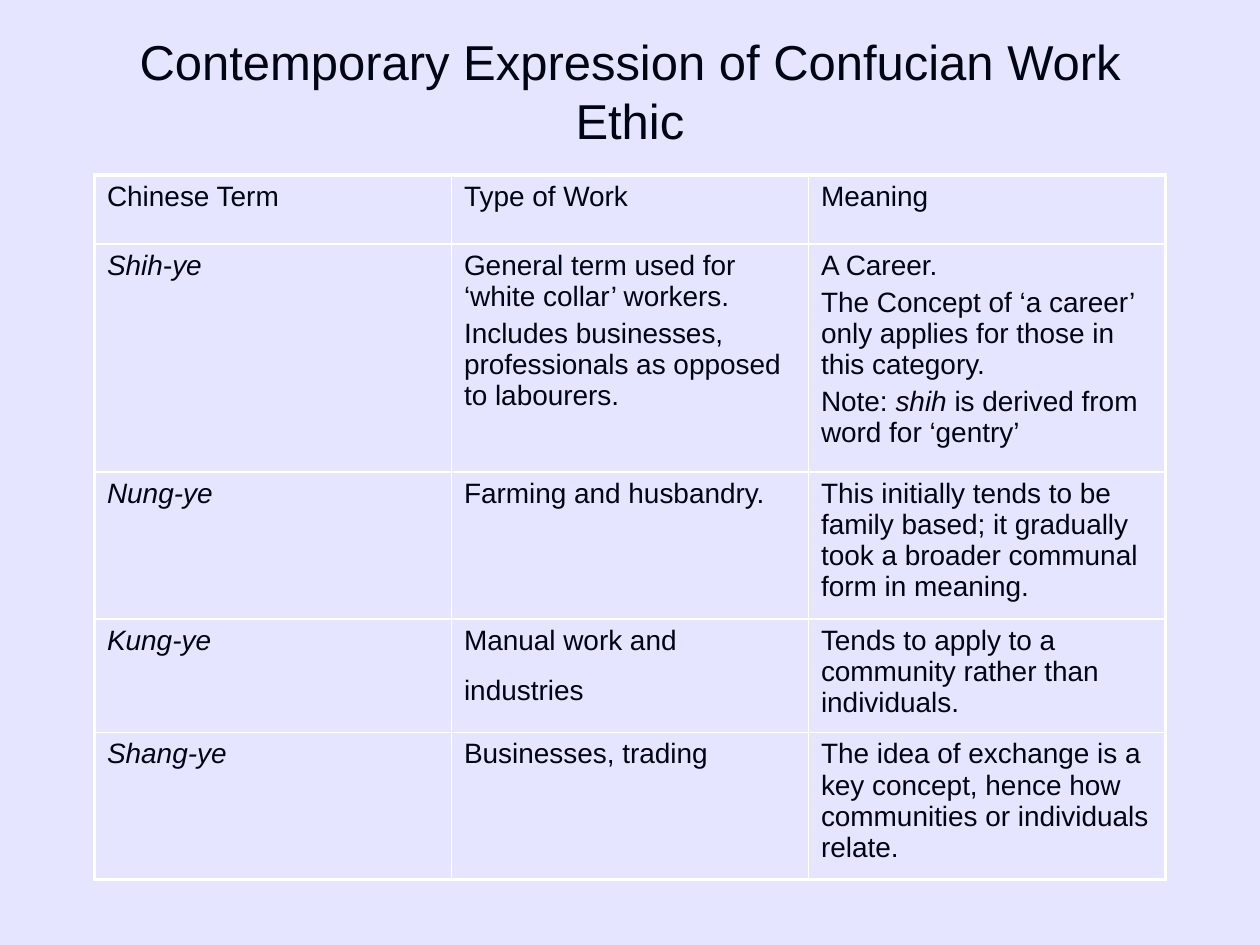
"""Build a slide tabulating Chinese terms of the Confucian work ethic."""
from dataclasses import dataclass

import pptx
import pptx.dml.color
import pptx.enum.text
import pptx.oxml.ns
import pptx.util
from lxml import etree

Pt = pptx.util.Pt


@dataclass(frozen=True)
class Theme:
    background: str = "E5E5FF"
    ink: str = "000514"
    border: str = "FFFFFF"
    font: str = "Arial"
    title_size: float = 28
    body_size: float = 16
    paragraph_gap: float = 3.2
    inner_border: float = 1
    outer_border: float = 2.25


@dataclass(frozen=True)
class WorkRow:
    height: float
    term: str
    work: tuple[str, ...]
    meaning: tuple[str, ...]


THEME = Theme()
LEFT, WIDTH = 54, 612
TABLE_TOP = 100
ROWS = (
    WorkRow(39.5, "Chinese Term", ("Type of Work",), ("Meaning",)),
    WorkRow(
        130.3,
        "*Shih*-*ye*",
        (
            "General term used for ‘white collar’ workers.",
            "Includes businesses, professionals as opposed to labourers.",
        ),
        (
            "A Career.",
            "The Concept of ‘a career’ only applies for those in this category.",
            "Note: *shih* is derived from word for ‘gentry’",
        ),
    ),
    WorkRow(
        84,
        "*Nung-ye*",
        ("Farming and husbandry.",),
        ("This initially tends to be family based; it gradually took a broader communal form in meaning.",),
    ),
    WorkRow(
        64.6,
        "*Kung-ye*",
        ("Manual work and industries",),
        ("Tends to apply to a community rather than individuals.",),
    ),
    WorkRow(
        84,
        "*Shang-ye*",
        ("Businesses, trading",),
        ("The idea of exchange is a key concept, hence how communities or individuals relate.",),
    ),
)


def add_span(para, text: str, size: float, italic: bool = False) -> None:
    """Add one styled run to a paragraph."""
    span = para.add_run()
    span.text = text
    span.font.name = THEME.font
    span.font.size = Pt(size)
    span.font.italic = italic
    span.font.bold = False
    span.font.color.rgb = pptx.dml.color.RGBColor.from_string(THEME.ink)


def write_paragraphs(frame, texts: tuple[str, ...]) -> None:
    """Write paragraphs in which asterisks enclose italic words."""
    for index, text in enumerate(texts):
        para = frame.add_paragraph() if index else frame.paragraphs[0]
        para.space_before = Pt(THEME.paragraph_gap if index else 0)
        for part, words in enumerate(text.split("*")):
            if words:
                add_span(para, words, THEME.body_size, italic=part % 2 == 1)


def draw_borders(cell, outer_sides: dict[str, bool]) -> None:
    """Give each side of a cell its inner or outer line width."""
    qn = pptx.oxml.ns.qn
    properties = cell._tc.get_or_add_tcPr()
    for side, outer in outer_sides.items():
        width = THEME.outer_border if outer else THEME.inner_border
        line = etree.SubElement(properties, qn(f"a:ln{side}"), w=str(int(Pt(width))))
        fill = etree.SubElement(line, qn("a:solidFill"))
        etree.SubElement(fill, qn("a:srgbClr"), val=THEME.border)


def add_title(page, text: str) -> None:
    """Add the centred slide title."""
    box = page.shapes.add_textbox(Pt(LEFT), Pt(15), Pt(WIDTH), Pt(73.5))
    box.text_frame.word_wrap = True
    box.text_frame.vertical_anchor = pptx.enum.text.MSO_ANCHOR.MIDDLE
    para = box.text_frame.paragraphs[0]
    para.alignment = pptx.enum.text.PP_ALIGN.CENTER
    add_span(para, text, THEME.title_size)


def add_work_table(page, rows: tuple[WorkRow, ...]) -> None:
    """Add the table of terms, kinds of work and meanings."""
    column_count = 3
    total_height = sum(row.height for row in rows)
    table = page.shapes.add_table(
        len(rows), column_count, Pt(LEFT), Pt(TABLE_TOP), Pt(WIDTH), Pt(total_height)
    ).table
    table.first_row = table.horz_banding = False
    for column in table.columns:
        column.width = Pt(WIDTH / column_count)
    for row_index, row in enumerate(rows):
        table.rows[row_index].height = Pt(row.height)
        for column_index, texts in enumerate(((row.term,), row.work, row.meaning)):
            cell = table.cell(row_index, column_index)
            draw_borders(cell, {
                "L": column_index == 0,
                "R": column_index == column_count - 1,
                "T": row_index == 0,
                "B": row_index == len(rows) - 1,
            })
            cell.fill.background()
            cell.margin_left = cell.margin_right = Pt(7.2)
            cell.margin_top = cell.margin_bottom = Pt(3.6)
            write_paragraphs(cell.text_frame, texts)
            if row.term == "*Kung-ye*" and column_index == 1:
                add_span(cell.text_frame.paragraphs[0], " ", THEME.title_size)


def main() -> None:
    """Create and save the deck."""
    deck = pptx.Presentation()
    deck.slide_width, deck.slide_height = Pt(720), Pt(540)
    page = deck.slides.add_slide(deck.slide_layouts[6])
    page.background.fill.solid()
    page.background.fill.fore_color.rgb = pptx.dml.color.RGBColor.from_string(THEME.background)
    add_title(page, "Contemporary Expression of Confucian Work Ethic")
    add_work_table(page, ROWS)
    deck.save("out.pptx")


if __name__ == "__main__":
    main()
